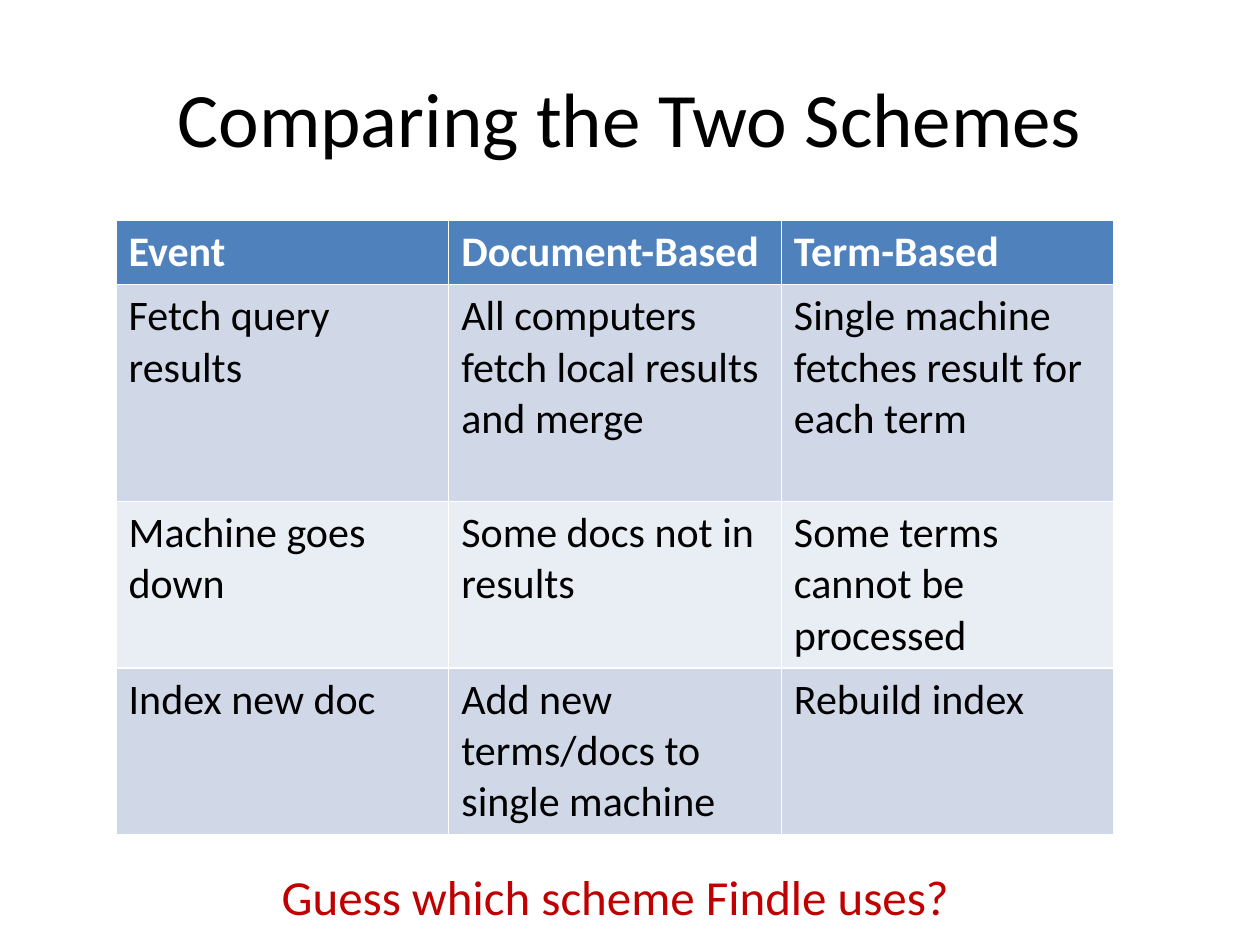
from pptx import Presentation
from pptx.dml.color import RGBColor
from pptx.enum.text import MSO_ANCHOR, PP_ALIGN
from pptx.util import Cm, Pt

MIDDLE = MSO_ANCHOR.MIDDLE
LEFT, CENTER = PP_ALIGN.LEFT, PP_ALIGN.CENTER

BLACK = RGBColor(0x00, 0x00, 0x00)
WHITE = RGBColor(0xFF, 0xFF, 0xFF)
RED = RGBColor(0xC0, 0x00, 0x00)
BLUE = RGBColor(0x4F, 0x81, 0xBD)
BANDS = [RGBColor(0xE9, 0xED, 0xF4), RGBColor(0xD0, 0xD8, 0xE8)]


def write(frame, text, align, **form):
    frame.text = text
    para = frame.paragraphs[0]
    para.alignment = align
    font = para.runs[0].font
    color = form.pop("color")
    for key, value in {"name": "Calibri", **form}.items():
        setattr(font, key, value)
    font.color.rgb = color


deck = Presentation()
deck.slide_width, deck.slide_height = Cm(25.4), Cm(19.05)
slide = deck.slides.add_slide(deck.slide_layouts[5])

# Title
title = slide.shapes.title
place = {"left": 1.27, "top": 0.76, "width": 22.86, "height": 3.18}
for side, size in place.items():
    setattr(title, side, Cm(size))
title.text_frame.vertical_anchor = MIDDLE
write(title.text_frame, "Comparing the Two Schemes", CENTER,
      size=Pt(44), color=BLACK)

# Comparison table; the default style draws its white borders
rows = [
    ("Event", "Document-Based", "Term-Based"),
    ("Fetch query results", "All computers fetch local results and merge",
     "Single machine fetches result for each term"),
    ("Machine goes down", "Some docs not in results",
     "Some terms cannot be processed"),
    ("Index new doc", "Add new terms/docs to single machine",
     "Rebuild index"),
]
tall = [1.29, 4.37, 3.35, 3.35]
left, wide = Cm(2.34), Cm(20.12)
table = slide.shapes.add_table(len(rows), len(rows[0]), left, Cm(4.45),
                               wide, Cm(sum(tall))).table
for i, row in enumerate(rows):
    table.rows[i].height = Cm(tall[i])
    head = i == 0
    for j, text in enumerate(row):
        cell = table.cell(i, j)
        cell.fill.solid()
        cell.fill.fore_color.rgb = BLUE if head else BANDS[i % 2]
        write(cell.text_frame, text, LEFT, size=Pt(24), bold=head,
              color=WHITE if head else BLACK)

# Closing question
box = slide.shapes.add_textbox(left, Cm(17.35), wide, Cm(1.45))
box.text_frame.word_wrap = True
write(box.text_frame, "Guess which scheme Findle uses?", CENTER,
      size=Pt(28), color=RED)

deck.save("out.pptx")
